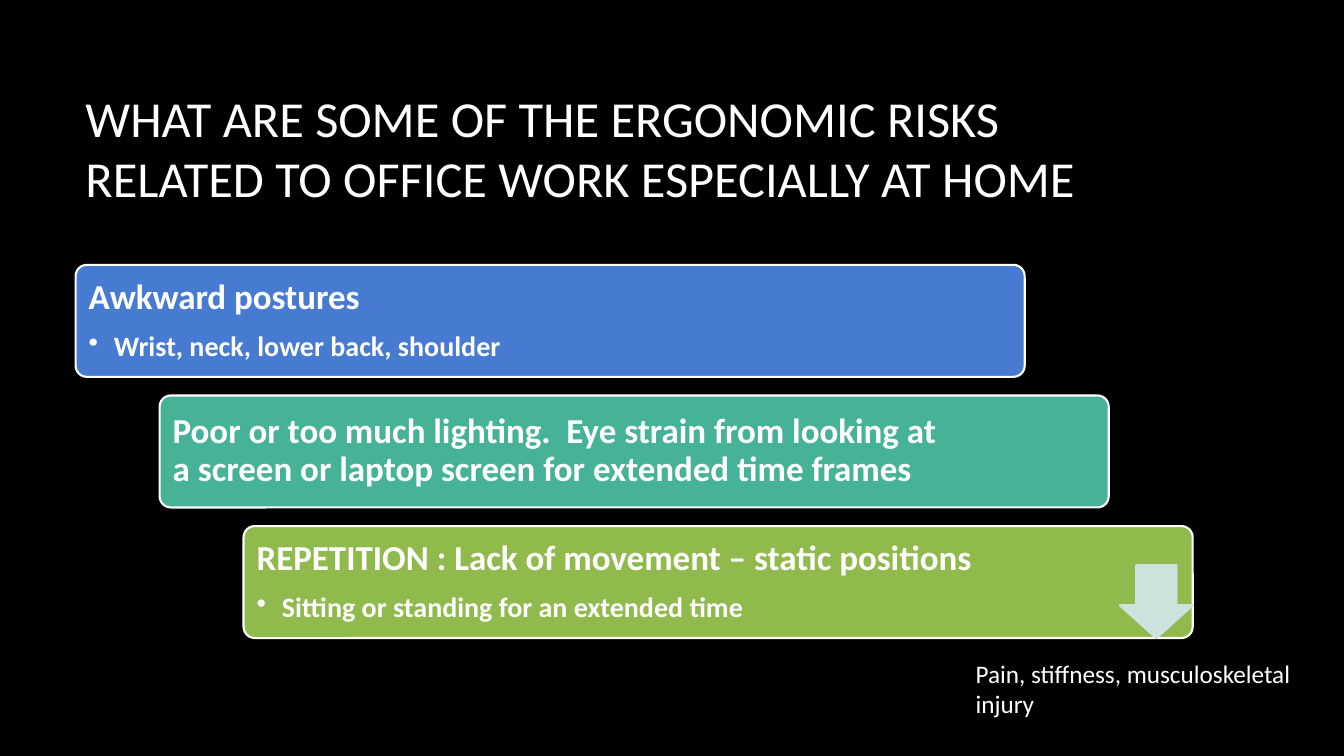
from dataclasses import dataclass

from lxml.etree import SubElement
from pptx import Presentation
from pptx.dml.color import RGBColor
from pptx.enum.shapes import MSO_SHAPE as Preset
from pptx.enum.text import MSO_ANCHOR as Anchor
from pptx.oxml.ns import qn
from pptx.util import Pt

TITLE = "WHAT ARE SOME OF THE ERGONOMIC RISKS RELATED TO OFFICE WORK ESPECIALLY AT HOME"
RISKS = [  # heading, detail, card colour, text width
    ("Awkward postures", "Wrist, neck, lower back, shoulder", "477BD1", 592),
    ("Poor or too much lighting.  Eye strain from looking at a screen or laptop "
     "screen for extended time frames", None, "46B298", 561.6),
    ("REPETITION : Lack of movement – static positions",
     "Sitting or standing for an extended time", "90BA4C", 561.6),
]
OUTCOME = "Pain, stiffness, musculoskeletal injury"


@dataclass(frozen=True)
class Theme:
    font: str = "Calibri"
    background: str = "000000"
    text: str = "FFFFFF"
    outline: str = "FFFFFF"
    arrows: tuple = ("CFD7EE", "CFE4DD")
    arrow_opacity: int = 90
    title_size: float = 36
    heading_size: float = 25
    detail_size: float = 20
    outcome_size: float = 18


THEME = Theme()
CARD_LEFT, CARD_TOP, CARD_WIDTH, CARD_HEIGHT = 54, 189.2, 678, 80
STEP_X, STEP_Y = 60, 93.3
CARD_INSET = 2.3
ARROW_SIZE = 52


def color(value):
    return RGBColor.from_string(value)


def add_bullet(paragraph, indent=18):
    properties = paragraph._p.get_or_add_pPr()
    properties.set("marL", str(Pt(indent)))
    properties.set("indent", str(-Pt(indent)))
    SubElement(properties, qn("a:buChar")).set("char", "•")


def add_text(slide, box, lines, *, anchor=Anchor.TOP, bold=False, inset_y=3.6,
             line_spacing=1.0, space_after=0):
    """Add a text box; each line is (text, size, bulleted)."""
    frame = slide.shapes.add_textbox(*map(Pt, box)).text_frame
    frame.word_wrap = True
    frame.vertical_anchor = anchor
    frame.margin_top = frame.margin_bottom = Pt(inset_y)
    for index, (text, size, bulleted) in enumerate(lines):
        paragraph = frame.add_paragraph() if index else frame.paragraphs[0]
        paragraph.line_spacing = line_spacing
        if index < len(lines) - 1:
            paragraph.space_after = Pt(space_after)
        if bulleted:
            add_bullet(paragraph)
        run = paragraph.add_run()
        run.text = text
        run.font.name = THEME.font
        run.font.size = Pt(size)
        run.font.bold = bold
        run.font.color.rgb = color(THEME.text)


def add_preset(slide, preset, box, adjustments, fill, line, opacity=100):
    shape = slide.shapes.add_shape(preset, *map(Pt, box))
    shape.shadow.inherit = False
    for index, value in enumerate(adjustments):
        shape.adjustments[index] = value
    shape.fill.solid()
    shape.fill.fore_color.rgb = color(fill)
    shape.line.color.rgb = color(line)
    shape.line.width = Pt(1.5)
    if opacity < 100:
        for element in shape._element.spPr.iter(qn("a:srgbClr")):
            SubElement(element, qn("a:alpha")).set("val", str(opacity * 1000))


def add_risk(slide, index, heading, detail, fill, text_width):
    left, top = CARD_LEFT + index * STEP_X, CARD_TOP + index * STEP_Y
    add_preset(slide, Preset.ROUNDED_RECTANGLE, (left, top, CARD_WIDTH, CARD_HEIGHT),
               [0.1], fill, THEME.outline)
    lines = [(heading, THEME.heading_size, False)]
    if detail:
        lines.append((detail, THEME.detail_size, True))
    box = (left + CARD_INSET, top + CARD_INSET, text_width, CARD_HEIGHT - 2 * CARD_INSET)
    add_text(slide, box, lines, anchor=Anchor.MIDDLE, bold=True, inset_y=7.2,
             line_spacing=0.9, space_after=10.7)


def main():
    presentation = Presentation()
    presentation.slide_width, presentation.slide_height = Pt(960), Pt(540)
    slide = presentation.slides.add_slide(presentation.slide_layouts[6])
    slide.background.fill.solid()
    slide.background.fill.fore_color.rgb = color(THEME.background)

    add_text(slide, (54, 48, 798, 114.5), [(TITLE, THEME.title_size, False)],
             anchor=Anchor.MIDDLE)
    for index, risk in enumerate(RISKS):
        add_risk(slide, index, *risk)

    last = len(RISKS) - 1
    arrow_left = CARD_LEFT + last * STEP_X + CARD_WIDTH - ARROW_SIZE
    arrow_top = CARD_TOP + last * STEP_Y + CARD_HEIGHT - ARROW_SIZE
    for fill in THEME.arrows:
        add_preset(slide, Preset.DOWN_ARROW, (arrow_left, arrow_top, ARROW_SIZE, ARROW_SIZE),
                   [0.55, 0.45], fill, fill, THEME.arrow_opacity)

    add_text(slide, (689.8, 466.6, 245.5, 51), [(OUTCOME, THEME.outcome_size, False)])
    presentation.save("out.pptx")


if __name__ == "__main__":
    main()
